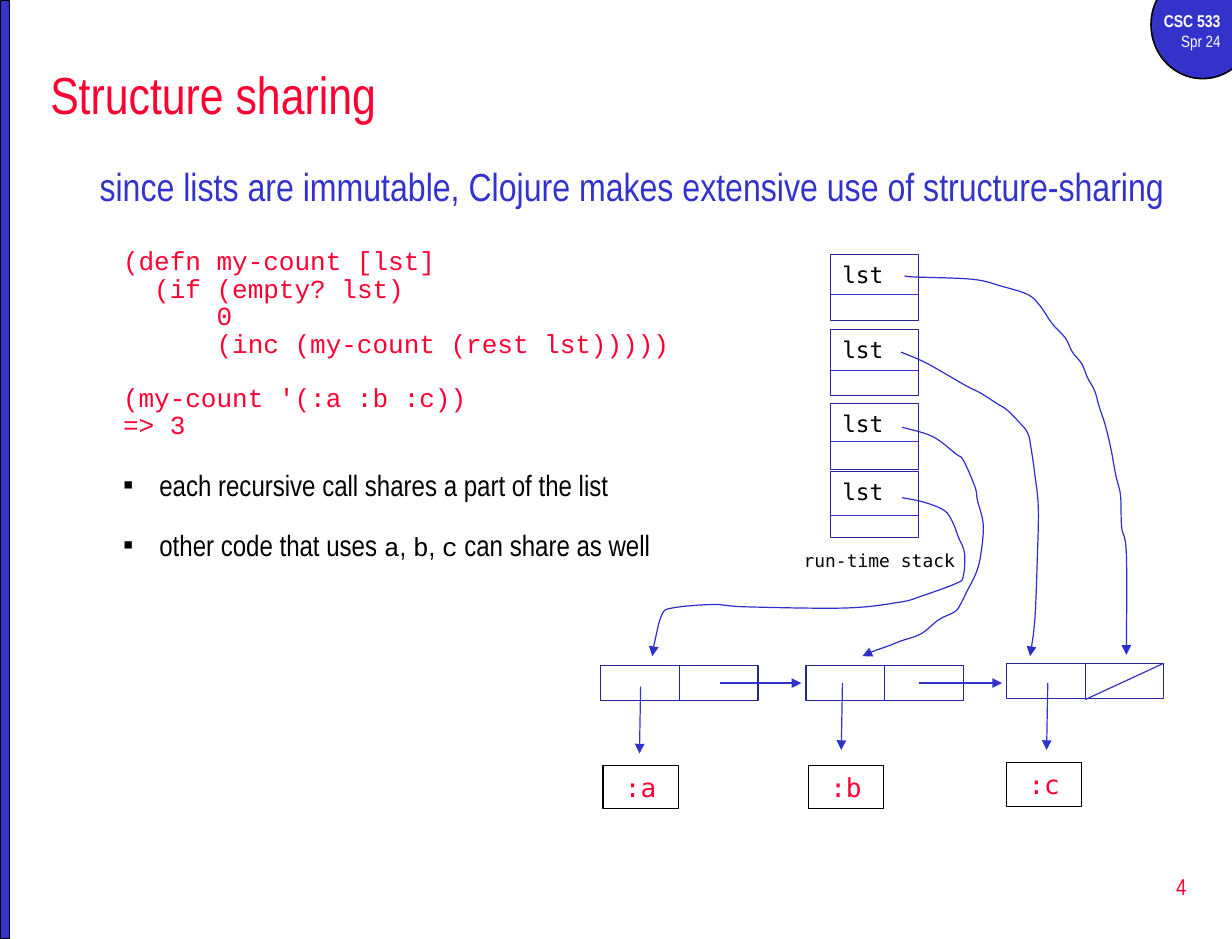
from lxml.etree import SubElement
from pptx import Presentation
from pptx.dml.color import RGBColor
from pptx.enum.shapes import MSO_CONNECTOR, MSO_SHAPE
from pptx.enum.text import MSO_ANCHOR, PP_ALIGN
from pptx.oxml.ns import qn
from pptx.util import Inches, Pt

BLUE = RGBColor(0x33, 0x33, 0xCC)
NAVY = RGBColor(0x26, 0x26, 0x99)
INK = RGBColor(0x2E, 0x2E, 0xCB)
RED = RGBColor(0xFF, 0x00, 0x33)
BLACK = RGBColor(0, 0, 0)
WHITE = RGBColor(0xFF, 0xFF, 0xFF)

TITLE = {"name": "Arial Narrow", "size": Pt(32), "color": RED}
HEAD = {**TITLE, "size": Pt(24), "color": BLUE}
CODE = {"name": "Courier New", "size": Pt(16), "color": RED}
NOTE = {**TITLE, "size": Pt(18), "color": BLACK}
TERM = {**CODE, "color": BLACK}
COURSE = {**TITLE, "size": Pt(10.5), "color": WHITE, "bold": True}
SEASON = {**COURSE, "size": Pt(10), "bold": False}
PAGE = {**TITLE, "size": Pt(14)}
VAR = {"name": "DejaVu Sans Mono", "size": Pt(14), "color": BLACK}
LABEL = {**VAR, "size": Pt(11)}
ATOM = {**VAR, "size": Pt(16), "color": RED}


class Canvas:
    def __init__(self, slide, width=0.75):
        self.slide = slide
        self.shapes = slide.shapes
        self.width = Pt(width)

    def put(self, para, runs, **layout):
        for key, value in layout.items():
            setattr(para, key, value)
        for text, style in runs:
            run = para.add_run()
            run.text = text
            for key, value in style.items():
                if key == "color":
                    run.font.color.rgb = value
                else:
                    setattr(run.font, key, value)

    def text(self, box, lines, align=PP_ALIGN.LEFT, anchor=MSO_ANCHOR.TOP):
        frame = self.shapes.add_textbox(*map(Inches, box)).text_frame
        frame.word_wrap = True
        frame.vertical_anchor = anchor
        for i, line in enumerate(lines):
            para = frame.add_paragraph() if i else frame.paragraphs[0]
            self.put(para, [line], alignment=align)
        return frame

    def shape(self, kind, box, line, fill=None, width=None):
        item = self.shapes.add_shape(kind, *map(Inches, box))
        item.shadow.inherit = False
        if fill is None:
            item.fill.background()
        else:
            item.fill.solid()
            item.fill.fore_color.rgb = fill
        item.line.color.rgb = line
        item.line.width = width or self.width
        return item

    def box(self, box, line, text="", style=VAR, align=PP_ALIGN.LEFT):
        item = self.shape(MSO_SHAPE.RECTANGLE, box, line)
        if text:
            frame = item.text_frame
            frame.vertical_anchor = MSO_ANCHOR.TOP
            self.put(frame.paragraphs[0], [(text, style)], alignment=align)

    def arrow(self, item):
        edge = item._element.spPr.find(qn("a:ln"))
        SubElement(edge, qn("a:tailEnd"), type="triangle")

    def line(self, start, end, head=False):
        ends = map(Inches, (*start, *end))
        item = self.shapes.add_connector(MSO_CONNECTOR.STRAIGHT, *ends)
        item.line.color.rgb = BLUE
        item.line.width = self.width
        if head:
            self.arrow(item)
        SubElement(item._element.spPr, qn("a:effectLst"))

    def curve(self, knots):
        knots = [tuple(map(Inches, knot)) for knot in knots]
        ends = [knots[0], *knots, knots[-1]]
        spots = []
        for a, b, c, d in zip(ends, ends[1:], ends[2:], ends[3:]):
            spots.append([q + (r - p) / 6 for p, q, r in zip(a, b, c)])
            spots.append([r - (s - q) / 6 for q, r, s in zip(b, c, d)])
            spots.append(c)
        pen = self.shapes.build_freeform(*knots[0])
        pen.add_line_segments(spots, close=False)
        item = pen.convert_to_shape()
        legs = list(item._element.iter(qn("a:lnTo")))
        for trio in zip(legs[::3], legs[1::3], legs[2::3]):
            bend = trio[0].makeelement(qn("a:cubicBezTo"), {})
            trio[0].addprevious(bend)
            for leg in trio:
                bend.append(leg[0])
                leg.getparent().remove(leg)
        item.shadow.inherit = False
        item.fill.background()
        item.line.color.rgb = INK
        item.line.width = self.width
        self.arrow(item)

    def body(self, box, rows):
        frame = self.text(box, [])
        for i, (runs, gap, left, hang, space, mark) in enumerate(rows):
            para = frame.add_paragraph() if i else frame.paragraphs[0]
            self.put(para, runs, space_before=Pt(gap), line_spacing=space)
            props = para._p.get_or_add_pPr()
            props.set("marL", str(Inches(left)))
            props.set("indent", str(Inches(-hang)))
            if mark:
                SubElement(props, qn("a:buFont"), typeface="Arial")
                SubElement(props, qn("a:buChar"), char=mark)


def main():
    deck = Presentation()
    deck.slide_width, deck.slide_height = Inches(10.5), Inches(8)
    art = Canvas(deck.slides.add_slide(deck.slide_layouts[6]))

    art.shape(MSO_SHAPE.OVAL, (9.81, -0.25, 0.88, 0.92), BLACK, BLUE, Pt(1))
    art.text((9.67, 0.04, 0.83, 0.46),
             [("CSC 533", COURSE), ("Spr 24", SEASON)], PP_ALIGN.RIGHT)
    art.shape(MSO_SHAPE.RECTANGLE, (0, 0, 0.08, 8), BLACK, BLUE, Pt(1))
    art.text((8.02, 7.29, 2.19, 0.53), [("4", PAGE)],
             PP_ALIGN.RIGHT, MSO_ANCHOR.MIDDLE)
    art.text((0.33, 0.42, 9.92, 0.75), [("Structure sharing", TITLE)],
             anchor=MSO_ANCHOR.MIDDLE)

    head = "since lists are immutable, Clojure makes extensive use of structure-sharing"
    rows = [([(head, HEAD)], 4.8, 0.38, 0.38, 1.0, "")]
    char = 0.133
    for text, gap, depth in (
        ("(defn my-count [lst]", 25.5, 0),
        ("(if (empty? lst)", 1.6, 2),
        ("0", 1.6, 6),
        ("(inc (my-count (rest lst)))))", 1.6, 6),
        ("(my-count '(:a :b :c))", 17.7, 0),
        ("=> 3", 1.6, 0),
    ):
        rows.append(([(text, CODE)], gap, 0.2 + depth * char, 0, 0.8, ""))
    share = [("each recursive call shares a part of the list", NOTE)]
    reuse = [("other code that uses ", NOTE), ("a", TERM), (", ", NOTE),
             ("b", TERM), (", ", NOTE), ("c", TERM),
             (" can share as well", NOTE)]
    for runs, gap in ((share, 20.6), (reuse, 19.6)):
        rows.append((runs, gap, 0.51, 0.31, 0.8, "▪"))
    art.body((0.75, 1.33, 9.52, 3.71), rows)

    for top, rule in ((2.17, 2.51), (2.81, 3.16), (3.44, 3.76), (4.02, 4.39)):
        art.box((7.08, top, 0.75, 0.56), NAVY, "lst")
        art.line((7.08, rule), (7.83, rule))
    art.text((6.75, 4.63, 1.58, 0.29), [("run-time stack", LABEL)])

    cell = 0.67
    for name, left, top, stem, drop, shift in (
        (":a", 5.12, 5.67, 5.46, 5.85, 0.02),
        (":b", 6.87, 5.67, 7.18, 5.82, 0.02),
        (":c", 8.58, 5.65, 8.93, 5.82, 0),
    ):
        for x in (left, left + cell):
            art.box((x, top, cell, 0.3), NAVY)
        art.line((stem, drop), (stem - 0.01, drop + 0.57), True)
        art.box((left + shift, top + 0.85, 0.64, 0.37), BLACK,
                name, ATOM, PP_ALIGN.CENTER)
    for start, end in ((6.14, 6.83), (7.83, 8.54)):
        art.line((start, 5.82), (end, 5.82), True)
    art.line((9.92, 5.65), (9.25, 5.96))

    for knots in (
        [(7.69, 4.24), (7.88, 4.28), (8.05, 4.35), (8.12, 4.45),
         (8.17, 4.58), (8.22, 4.71), (8.21, 4.91), (8.15, 4.97),
         (7.85, 5.08), (7.67, 5.13), (7.21, 5.18), (6.36, 5.17),
         (6.08, 5.15), (5.73, 5.18), (5.64, 5.24), (5.58, 5.47),
         (5.56, 5.59)],
        [(7.69, 3.64), (7.95, 3.72), (8.15, 3.87), (8.21, 3.92),
         (8.31, 4.15), (8.33, 4.26), (8.38, 4.47), (8.36, 4.72),
         (8.32, 4.88), (8.24, 5.04), (8.19, 5.14), (8.14, 5.21),
         (8, 5.28), (7.85, 5.4), (7.68, 5.46), (7.58, 5.5),
         (7.44, 5.55), (7.35, 5.59)],
        [(7.68, 3), (7.87, 3.08), (8.05, 3.18), (8.24, 3.29),
         (8.36, 3.35), (8.5, 3.44), (8.58, 3.49), (8.68, 3.59),
         (8.76, 3.69), (8.79, 3.83), (8.82, 4.04), (8.85, 4.33),
         (8.84, 4.8), (8.82, 5.28), (8.78, 5.59)],
        [(7.71, 2.35), (7.79, 2.36), (8.29, 2.38), (8.54, 2.44),
         (8.76, 2.51), (8.86, 2.6), (8.97, 2.76), (9.08, 2.88),
         (9.14, 3), (9.22, 3.1), (9.27, 3.22), (9.33, 3.33),
         (9.37, 3.47), (9.42, 3.62), (9.47, 3.83), (9.51, 4.05),
         (9.55, 4.22), (9.56, 4.49), (9.6, 4.72), (9.6, 5.58)],
    ):
        art.curve(knots)

    deck.save("out.pptx")


if __name__ == "__main__":
    main()
